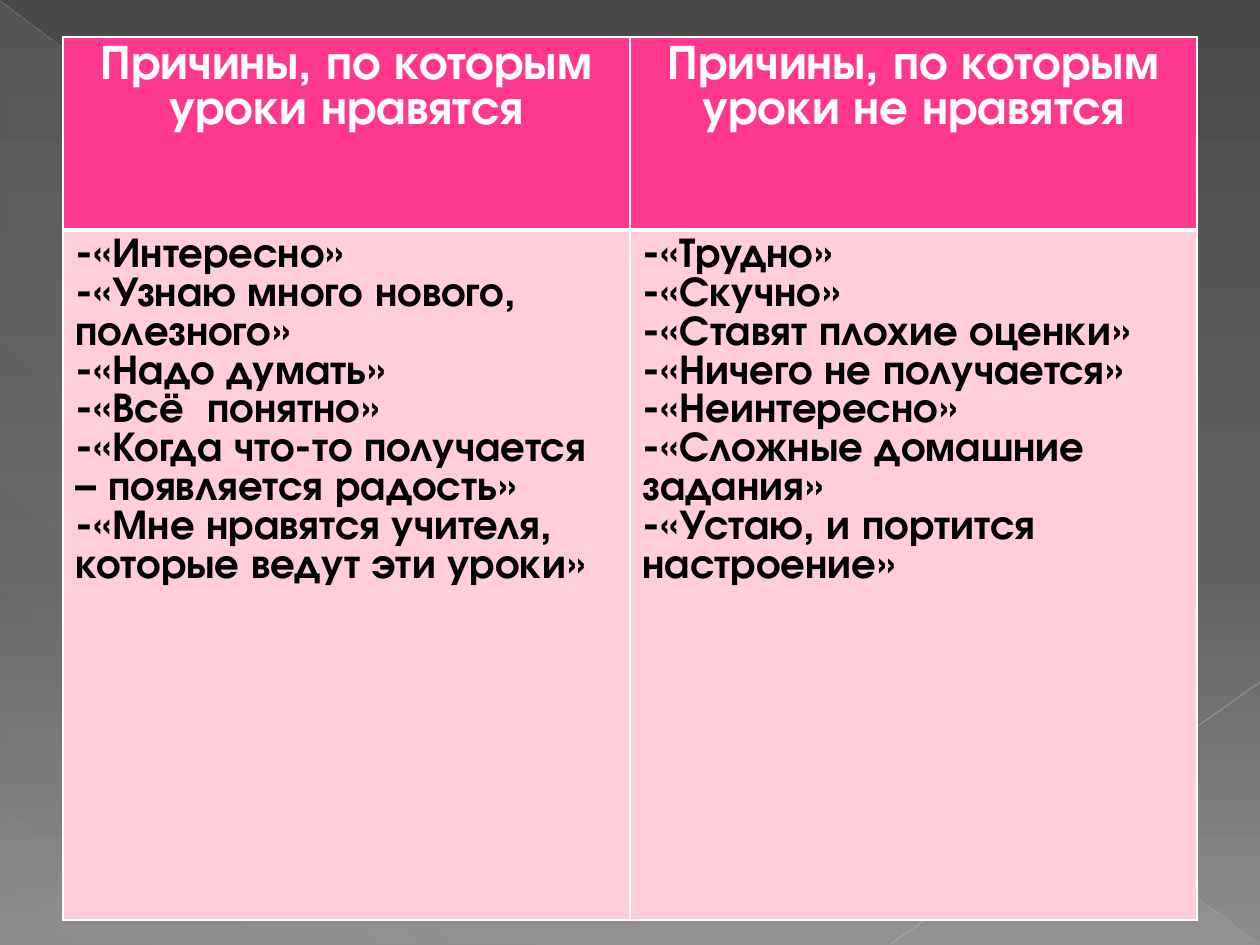
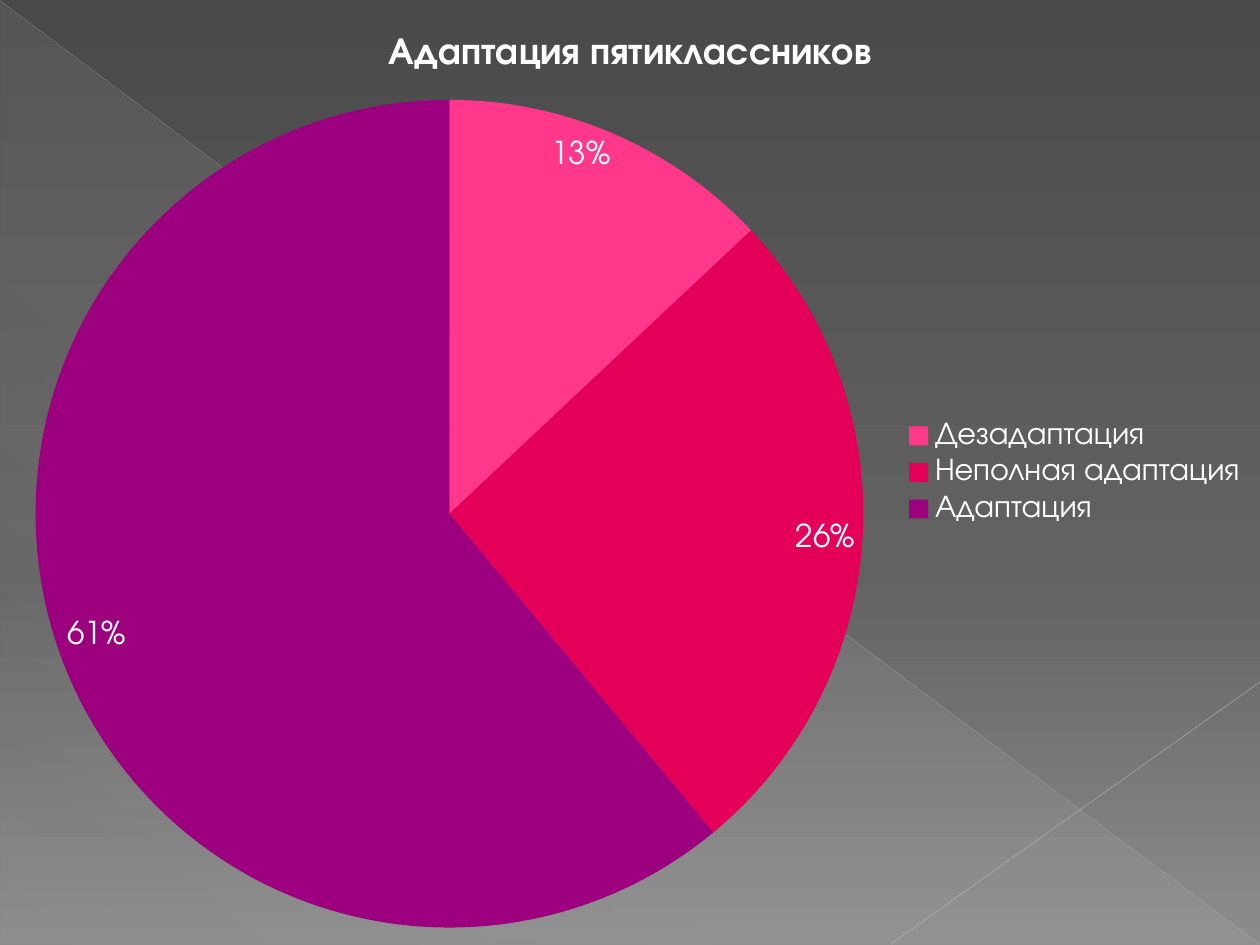
from lxml.etree import SubElement as Sub
from pptx import Presentation
from pptx.chart.data import CategoryChartData
from pptx.dml.color import RGBColor as RGB
from pptx.enum.chart import XL_CHART_TYPE as Kind, XL_LABEL_POSITION as Spot, XL_LEGEND_POSITION as Side
from pptx.enum.shapes import MSO_CONNECTOR as Link, MSO_SHAPE as Shape
from pptx.enum.text import PP_ALIGN as Align
from pptx.oxml.ns import qn
from pptx.util import Pt

PX = 914400 / 126
FONT = "TeX Gyre Adventor"
WHITE = RGB(0xFF, 0xFF, 0xFF)
BLACK = RGB(0, 0, 0)
PINK = RGB(0xFF, 0x38, 0x8C)
PALE = RGB(0xFF, 0xCE, 0xDA)
ROSE = RGB(0xE4, 0x00, 0x59)
PLUM = RGB(0x9C, 0x00, 0x7F)
MIST = RGB(0xD2, 0xD2, 0xD2)
SILVER = RGB(0xBF, 0xBF, 0xBF)
ASH = RGB(0xC6, 0xC6, 0xC6)
SKY = [(0, RGB(0x4A, 0x4A, 0x4A), 100), (60, RGB(0x62, 0x62, 0x62), 100), (100, RGB(0x8C, 0x8C, 0x8C), 100)]
VEIL = [(0, MIST, 10), (70, MIST, 8), (100, MIST, 1)]
RAYS = [((0, 1), (1259, 944), SILVER, 0.39, 35), ((1260, 682), (891, 944), ASH, 0.47, 45)]


def emu(*nums):
    return [round(n * PX) for n in nums]


def blend(old, stops, angle):
    grad = old.makeelement(qn("a:gradFill"), {"rotWithShape": "1"})
    steps = Sub(grad, qn("a:gsLst"))
    for pos, tint, alpha in stops:
        stop = Sub(steps, qn("a:gs"), pos=str(pos * 1000))
        color = Sub(stop, qn("a:srgbClr"), val=str(tint))
        Sub(color, qn("a:alpha"), val=str(alpha * 1000))
    Sub(grad, qn("a:lin"), ang=str(angle * 60000), scaled="0")
    old.getparent().replace(old, grad)


deck = Presentation()
deck.slide_width, deck.slide_height = emu(1260, 945)
slides = [deck.slides.add_slide(deck.slide_layouts[6]) for _ in range(2)]

for slide in slides:
    slide.background.fill.solid()
    back = slide._element.find(".//" + qn("p:bgPr"))
    blend(back.find(qn("a:solidFill")), SKY, 90)

    wedge = slide.shapes.add_shape(Shape.RIGHT_TRIANGLE, *emu(1, 3, 1258, 942))
    wedge.shadow.inherit = False
    wedge.line.fill.background()
    wedge.fill.solid()
    blend(wedge._element.spPr.find(qn("a:solidFill")), VEIL, 133)

    for start, end, tint, width, alpha in RAYS:
        ray = slide.shapes.add_connector(Link.STRAIGHT, *emu(*start, *end))
        ray.line.color.rgb = tint
        ray.line.width = Pt(width)
        props = ray._element.spPr
        Sub(props.find(".//" + qn("a:srgbClr")), qn("a:alpha"), val=str(alpha * 1000))
        Sub(props, qn("a:effectLst"))

likes = [
    "-«Интересно»",
    "-«Узнаю много нового, полезного»",
    "-«Надо думать»",
    "-«Всё  понятно»",
    "-«Когда что-то получается – появляется радость»",
    "-«Мне нравятся учителя, которые ведут эти уроки»",
]
gripes = [
    "-«Трудно»",
    "-«Скучно»",
    "-«Ставят плохие оценки»",
    "-«Ничего не получается»",
    "-«Неинтересно»",
    "-«Сложные домашние задания»",
    "-«Устаю, и портится настроение»",
]
heads = [["Причины, по которым уроки нравятся"], ["Причины, по которым уроки не нравятся"]]
rows = [
    (heads, 193, PINK, WHITE, 28, Align.CENTER, 3),
    ([likes, gripes], 690, PALE, BLACK, 24, Align.LEFT, 1),
]

table = slides[0].shapes.add_table(2, 2, *emu(63, 37, 1134, 883)).table
for r, (texts, height, fill, ink, size, align, base) in enumerate(rows):
    table.rows[r].height = emu(height)[0]
    for c, lines in enumerate(texts):
        cell = table.cell(r, c)
        props = cell._tc.get_or_add_tcPr()
        top = 1 if r == 0 else 3
        for tag, width in [("lnL", 1), ("lnR", 1), ("lnT", top), ("lnB", base)]:
            edge = Sub(props, qn("a:" + tag), w=str(Pt(width)))
            Sub(Sub(edge, qn("a:solidFill")), qn("a:srgbClr"), val=str(WHITE))
        cell.fill.solid()
        cell.fill.fore_color.rgb = fill
        frame = cell.text_frame
        for n, line in enumerate(lines):
            para = frame.add_paragraph() if n else frame.paragraphs[0]
            para.alignment = align
            run = para.add_run()
            run.text = line
            run.font.name = FONT
            run.font.size = Pt(size)
            run.font.bold = True
            run.font.color.rgb = ink

title = "Адаптация пятиклассников"
data = CategoryChartData(number_format="0%")
data.categories = ["Дезадаптация", "Неполная адаптация", "Адаптация"]
data.add_series(title, [0.13, 0.26, 0.61])
chart = slides[1].shapes.add_chart(Kind.PIE, *emu(0, 0, 1260, 945), data).chart
chart.font.name = FONT
chart.font.size = Pt(18)
chart.font.color.rgb = WHITE

chart.has_title = True
run = chart.chart_title.text_frame.paragraphs[0].add_run()
run.text = title
run.font.name = FONT
run.font.size = Pt(21.6)
run.font.bold = True
run.font.color.rgb = WHITE

chart.has_legend = True
chart.legend.position = Side.RIGHT
chart.legend.include_in_layout = False

plot = chart.plots[0]
plot.vary_by_categories = True
plot.has_data_labels = True
labels = plot.data_labels
labels.show_value = True
labels.show_percentage = False
labels.number_format = "0%"
labels.number_format_is_linked = False
labels.position = Spot.INSIDE_END
for n, tint in enumerate([PINK, ROSE, PLUM]):
    part = plot.series[0].points[n].format
    part.fill.solid()
    part.fill.fore_color.rgb = tint
    part.line.fill.background()

deck.save("out.pptx")
